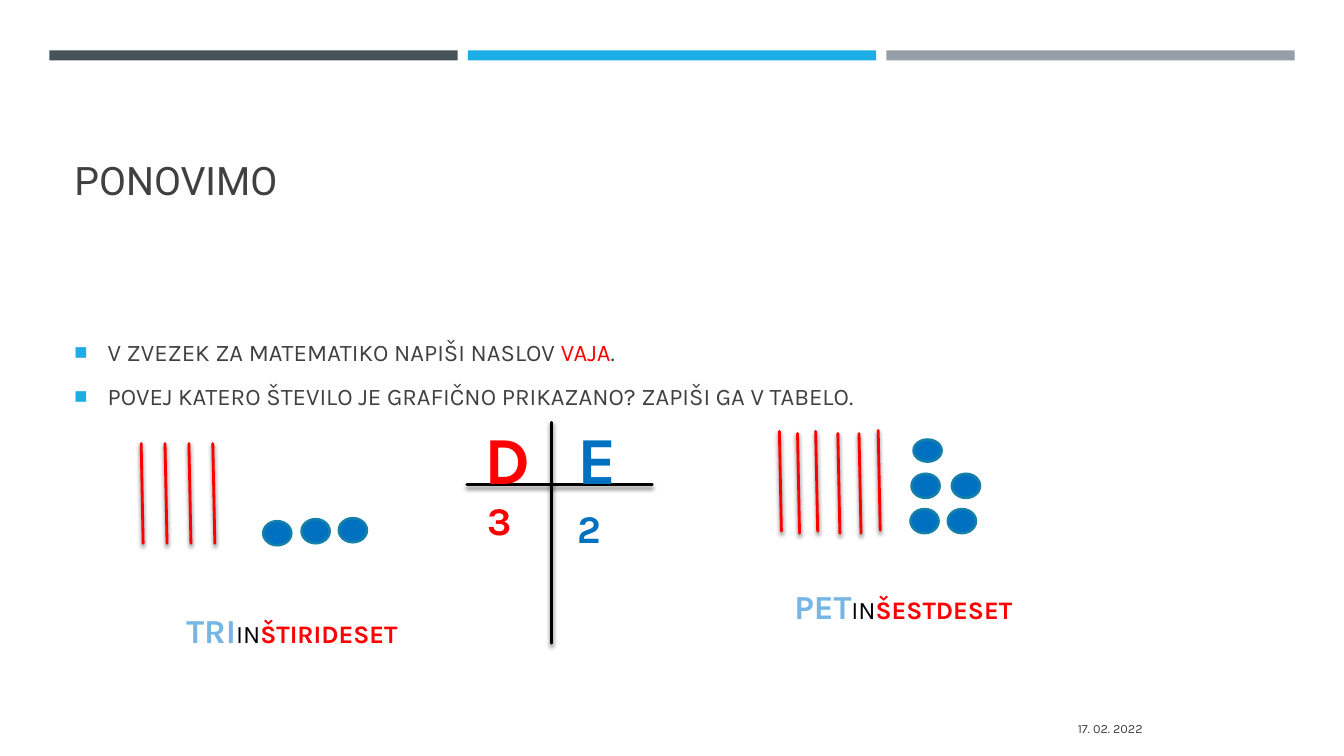
from lxml import etree
from pptx import Presentation
from pptx import util as u
from pptx.dml.color import RGBColor
from pptx.enum import shapes, text
from pptx.oxml import parse_xml
from pptx.oxml.ns import nsdecls, qn

RED, BLUE, SKY, GREY, BLACK = "FF0000", "0070C0", "75B6E5", "404040", "000000"
ACCENT = "1CADE4"

SHADOW = (
    f'<a:effectLst {nsdecls("a")}>'
    '<a:outerShdw blurRad="38100" dist="25400" dir="5400000" rotWithShape="0">'
    '<a:srgbClr val="000000"><a:alpha val="55000"/></a:srgbClr>'
    '</a:outerShdw></a:effectLst>'
)


def color(value):
    return RGBColor.from_string(value)


def add_block(slide, kind, left, top, width, height, fill, outline=None):
    shape = slide.shapes.add_shape(
        kind, u.Inches(left), u.Inches(top), u.Inches(width), u.Inches(height))
    shape.shadow.inherit = False
    shape.fill.solid()
    shape.fill.fore_color.rgb = color(fill)
    if outline:
        shape.line.color.rgb = color(outline)
        shape.line.width = u.Pt(1.75)
    else:
        shape.line.fill.background()


def add_counter(slide, left, top, height=0.24):
    add_block(slide, shapes.MSO_SHAPE.FLOWCHART_CONNECTOR,
              left, top, 0.28, height, BLUE, "1580A9")


def add_line(slide, x1, y1, x2, y2, stroke):
    connector = slide.shapes.add_connector(
        shapes.MSO_CONNECTOR.STRAIGHT,
        u.Inches(x1), u.Inches(y1), u.Inches(x2), u.Inches(y2))
    connector.line.color.rgb = color(stroke)
    connector.line.width = u.Pt(2)
    properties = connector.element.spPr
    properties.find(qn("a:ln")).set("cap", "rnd")
    properties.append(parse_xml(SHADOW))


def add_stick(slide, x, y):
    add_line(slide, x, y, x + 0.02, y + 0.99, RED)


def fill_paragraph(paragraph, runs, font="Karla"):
    """Each run is (wording, size, colour, bold)."""
    for wording, size, shade, bold in runs:
        run = paragraph.add_run()
        run.text = wording
        run.font.name = font
        run.font.size = u.Pt(size)
        run.font.bold = bold
        run.font.color.rgb = color(shade)


def add_text(slide, left, top, width, height, runs, font="Karla",
             align=text.PP_ALIGN.LEFT, anchor=text.MSO_ANCHOR.TOP):
    box = slide.shapes.add_textbox(
        u.Inches(left), u.Inches(top), u.Inches(width), u.Inches(height))
    frame = box.text_frame
    frame.word_wrap = True
    frame.vertical_anchor = anchor
    frame.paragraphs[0].alignment = align
    fill_paragraph(frame.paragraphs[0], runs, font)
    return frame


def format_bullet(paragraph):
    properties = paragraph._p.get_or_add_pPr()
    indent = u.Inches(0.33)
    properties.set("marL", str(indent))
    properties.set("indent", str(-indent))
    paragraph.line_spacing = 1.1
    paragraph.space_after = u.Pt(6)
    bullet_color = etree.SubElement(properties, qn("a:buClr"))
    etree.SubElement(bullet_color, qn("a:srgbClr"), val=ACCENT)
    etree.SubElement(properties, qn("a:buSzPct"), val="92000")
    etree.SubElement(properties, qn("a:buFont"), typeface="Arial")
    etree.SubElement(properties, qn("a:buChar"), char="■")


def add_tasks(slide):
    frame = add_text(slide, 0.64, 3.27, 12.06, 1, [
        ("V ZVEZEK ZA MATEMATIKO NAPIŠI NASLOV ", 17, GREY, False),
        ("VAJA", 17, RED, False),
        (".", 17, GREY, False)])
    second = frame.add_paragraph()
    second.space_before = u.Pt(3.4)
    fill_paragraph(second, [
        ("POVEJ KATERO ŠTEVILO JE GRAFIČNO PRIKAZANO? ZAPIŠI GA V TABELO.",
         17, GREY, False)])
    for paragraph in frame.paragraphs:
        format_bullet(paragraph)


def add_number_word(slide, left, top, ones, tens):
    add_text(slide, left, top, 2.6, 0.5, [
        (ones, 24, SKY, True), ("IN", 18, BLACK, False), (tens, 18, RED, True)])


def add_place_value_table(slide):
    add_line(slide, 5.47, 4.19, 5.47, 6.38, BLACK)
    add_line(slide, 4.63, 4.81, 6.47, 4.81, BLACK)
    center, middle = text.PP_ALIGN.CENTER, text.MSO_ANCHOR.MIDDLE
    for left, letter, shade in ((4.67, "D", RED), (5.56, "E", BLUE)):
        add_text(slide, left, 4.09, 0.73, 0.91,
                 [(letter, 48, shade, True)], align=center)
    for left, top, width, height, digit, shade in (
            (4.46, 4.89, 0.99, 0.53, "3", RED),
            (5.29, 4.81, 1.11, 0.86, "2", BLUE)):
        add_text(slide, left, top, width, height,
                 [(digit, 28, shade, True)], align=center, anchor=middle)


def main():
    presentation = Presentation()
    presentation.slide_width = u.Inches(13.33)
    presentation.slide_height = u.Inches(7.5)
    slide = presentation.slides.add_slide(presentation.slide_layouts[6])

    # Header bars
    for column, fill in enumerate(("465359", ACCENT, "969FA7")):
        add_block(slide, shapes.MSO_SHAPE.RECTANGLE,
                  0.49 + column * 4.15, 0.5, 4.05, 0.1, fill)

    # Title, tasks and date
    add_text(slide, 0.64, 0.77, 12.06, 1.3, [("PONOVIMO", 28, GREY, False)],
             font="Roboto", anchor=text.MSO_ANCHOR.BOTTOM)
    add_tasks(slide)
    add_text(slide, 8.32, 7.03, 3.11, 0.4, [("17. 02. 2022", 9, GREY, False)],
             align=text.PP_ALIGN.RIGHT, anchor=text.MSO_ANCHOR.MIDDLE)

    # Forty-three: four tens, three ones
    for index in range(4):
        add_stick(slide, 1.4 + index * 0.237, 4.4)
    for left, top in ((2.61, 5.17), (2.99, 5.15), (3.36, 5.14)):
        add_counter(slide, left, top)
    add_number_word(slide, 1.75, 6, "TRI", "ŠTIRIDESET")

    # Tens and ones table
    add_place_value_table(slide)

    # Sixty-five: six tens, five ones
    for x, y in ((7.73, 4.28), (7.91, 4.3), (8.09, 4.28),
                 (8.31, 4.3), (8.52, 4.3), (8.71, 4.27)):
        add_stick(slide, x, y)
    for left, top in ((9.03, 5.05), (9.4, 5.05), (9.04, 4.7), (9.44, 4.7)):
        add_counter(slide, left, top)
    add_counter(slide, 9.06, 4.36, 0.22)
    add_number_word(slide, 7.78, 5.76, "PET", "ŠESTDESET")

    presentation.save("out.pptx")


if __name__ == "__main__":
    main()
